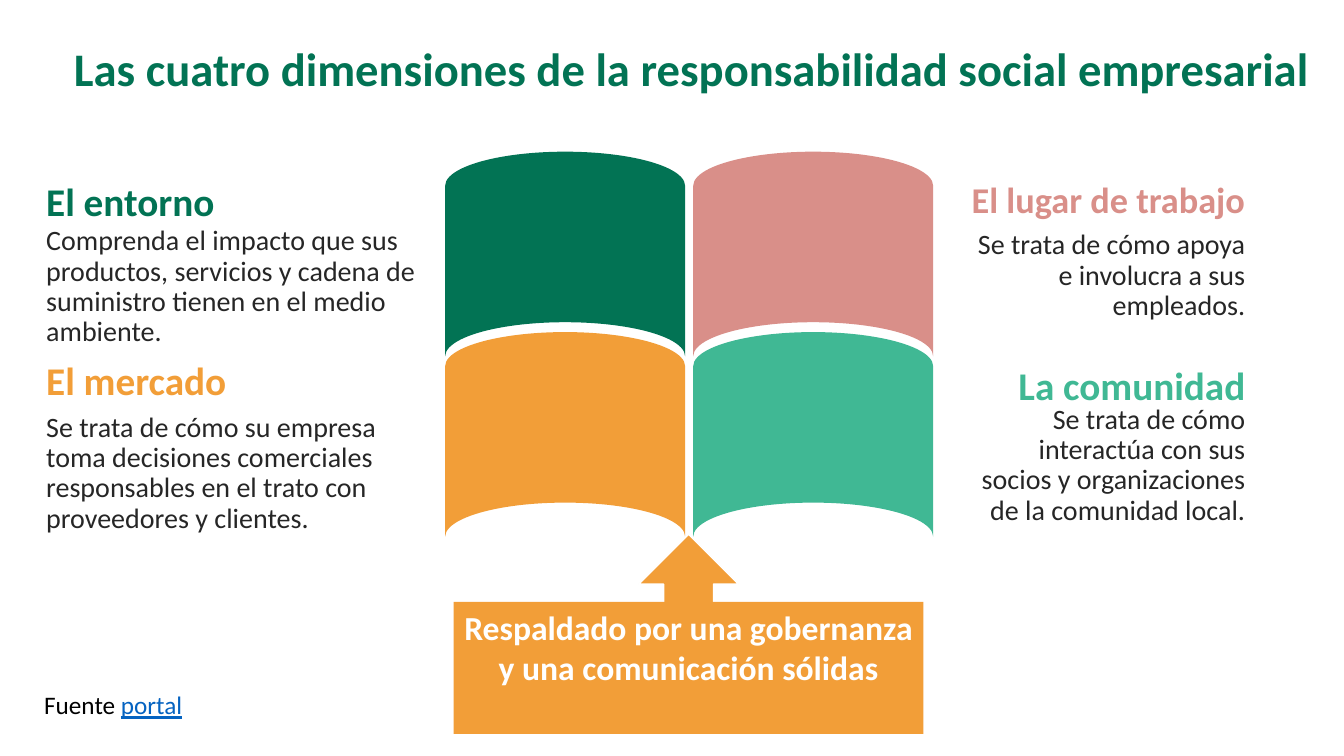
from pptx import Presentation
from pptx.dml.color import RGBColor
from pptx.enum.shapes import MSO_SHAPE as Shape
from pptx.enum.text import MSO_ANCHOR as Anchor, MSO_AUTO_SIZE as AutoSize, PP_ALIGN as Align
from pptx.util import Pt

EMU_PER_PX = 9144
GREEN, ROSE, ORANGE, MINT = "027354", "D98F89", "F29E38", "40B894"
WHITE, BLACK, INK, LINK = "FFFFFF", "000000", "262626", "0563C1"
PANEL_WIDTH, PANEL_HEIGHT = 203, 238
PANEL_LEFT, PANEL_TOP = 459, 133
COLUMN_STEP, ROW_STEP = 246, 179
TEXT_HEIGHT = 77


def px(length):
    return length * EMU_PER_PX


def rgb(color):
    return RGBColor.from_string(color)


def style_run(run, size, color, bold=False, underline=False):
    run.font.name = "Calibri"
    run.font.size = Pt(size)
    run.font.bold = bold
    run.font.underline = underline
    run.font.color.rgb = rgb(color)


def write(frame, text, size, color, bold=False, align=Align.LEFT, spacing=0.9):
    frame.word_wrap = True
    frame.auto_size = AutoSize.NONE
    frame.vertical_anchor = Anchor.TOP
    frame.text = text
    paragraph = frame.paragraphs[0]
    paragraph.alignment = align
    paragraph.line_spacing = spacing
    style_run(paragraph.runs[0], size, color, bold)
    return paragraph


def add_title(slide, text):
    title = slide.shapes.title
    title.left, title.top, title.width, title.height = px(0), px(41), px(1333), px(104)
    paragraph = write(title.text_frame, text, 33.3, GREEN, True, Align.CENTER)
    paragraph._p.get_or_add_pPr().set("marL", str(px(40)))


def add_text(slide, left, top, width, height, text, size, color, **style):
    box = slide.shapes.add_textbox(px(left), px(top), px(width), px(height))
    return write(box.text_frame, text, size, color, **style)


def add_filled(shapes, kind, left, top, width, height, color, rotation=0):
    shape = shapes.add_shape(kind, px(left), px(top), px(width), px(height))
    shape.rotation = rotation
    shape.shadow.inherit = False
    shape.fill.solid()
    shape.fill.fore_color.rgb = rgb(color)
    shape.line.fill.background()
    return shape


def add_panels(slide, colors):
    panels = slide.shapes.add_group_shape()
    for index, color in enumerate(colors):
        row, column = divmod(index, 2)
        add_filled(panels.shapes, Shape.FLOWCHART_STORED_DATA,
                   PANEL_LEFT + column * COLUMN_STEP, PANEL_TOP + row * ROW_STEP,
                   PANEL_WIDTH, PANEL_HEIGHT, color, 90)


def add_dimension(slide, left, width, heading_top, body_top, heading, body,
                  color, heading_size=28, align=Align.LEFT):
    add_text(slide, left, heading_top, width, TEXT_HEIGHT, heading,
             heading_size, color, bold=True, align=align)
    add_text(slide, left, body_top, width, TEXT_HEIGHT, body, 20, INK, align=align)


def add_source(slide, label, site):
    paragraph = add_text(slide, 34, 679, 330, 41, label, 18, BLACK, spacing=1)
    site_run = paragraph.add_run()
    site_run.text = site
    style_run(site_run, 18, LINK, underline=True)


def add_foundation(slide, text):
    callout = add_filled(slide.shapes, Shape.RIGHT_ARROW_CALLOUT,
                         584, 396, 198, 466, ORANGE, 270)
    callout.line.color.rgb = rgb(WHITE)
    callout.line.width = Pt(1)
    base = add_filled(slide.shapes, Shape.RECTANGLE, 450, 597, 466, 131, ORANGE)
    write(base.text_frame, text, 24, WHITE, True, Align.CENTER, 1)


def main():
    deck = Presentation()
    deck.slide_width, deck.slide_height = px(1333), px(750)
    slide = deck.slides.add_slide(deck.slide_layouts[5])
    add_panels(slide, [GREEN, ROSE, ORANGE, MINT])
    add_title(slide, "Las cuatro dimensiones de la responsabilidad social empresarial")
    add_dimension(slide, 36, 414, 176, 220, "El entorno",
                  "Comprenda el impacto que sus productos, servicios y cadena de "
                  "suministro tienen en el medio ambiente.", GREEN)
    add_dimension(slide, 36, 390, 354, 405, "El mercado",
                  "Se trata de cómo su empresa toma decisiones comerciales "
                  "responsables en el trato con proveedores y clientes.", ORANGE)
    add_dimension(slide, 951, 294, 176, 224, "El lugar de trabajo",
                  "Se trata de cómo apoya e involucra a sus empleados.",
                  ROSE, 25.9, Align.RIGHT)
    add_dimension(slide, 951, 294, 359, 397, "La comunidad",
                  "Se trata de cómo interactúa con sus socios y organizaciones "
                  "de la comunidad local.", MINT, align=Align.RIGHT)
    add_source(slide, "Fuente ", "portal")
    add_foundation(slide, "Respaldado por una gobernanza y una comunicación sólidas")
    deck.save("out.pptx")


if __name__ == "__main__":
    main()
